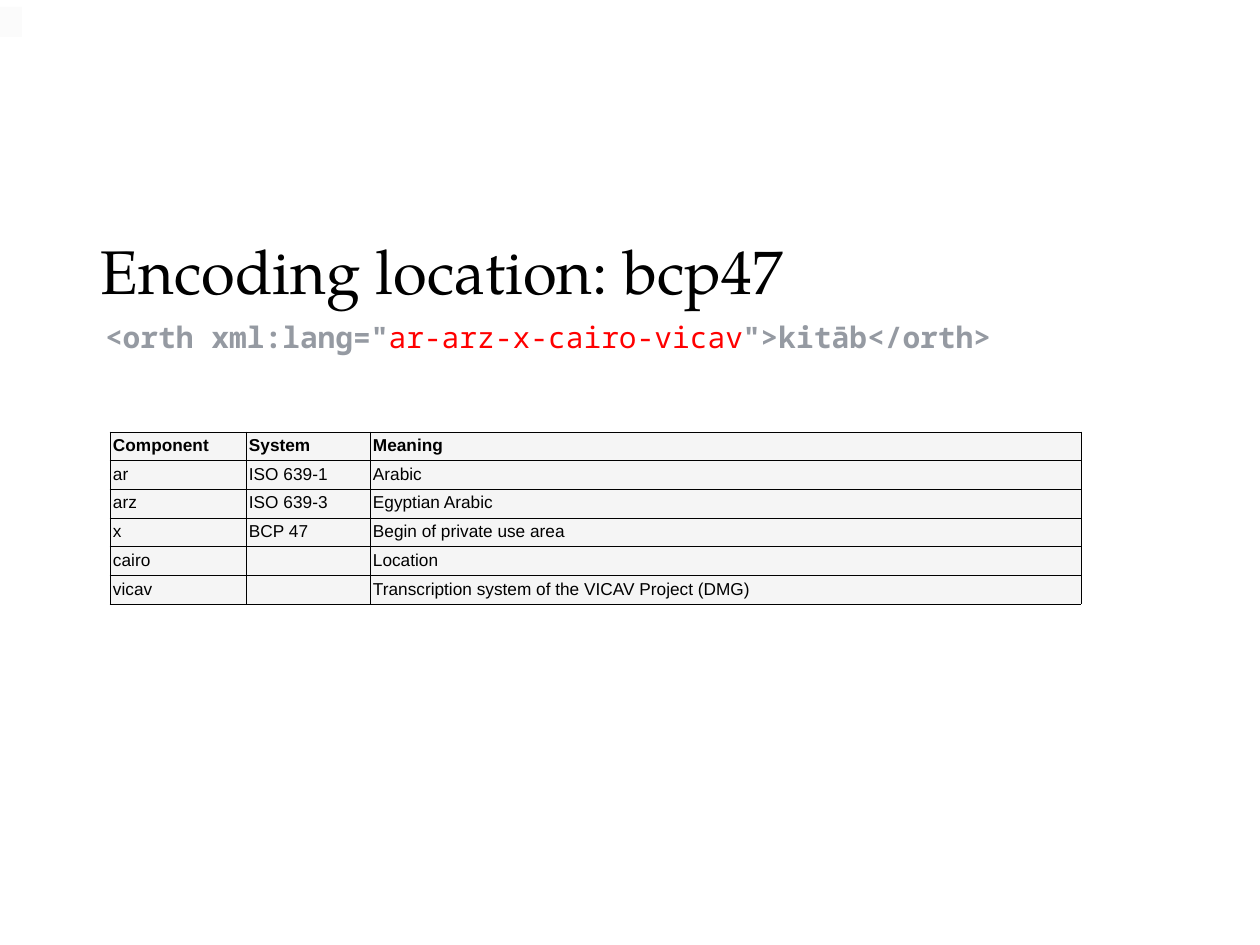
from lxml.etree import SubElement
from pptx import Presentation
from pptx.dml.color import RGBColor
from pptx.enum.shapes import MSO_SHAPE
from pptx.enum.text import MSO_ANCHOR, MSO_AUTO_SIZE, PP_ALIGN
from pptx.oxml import parse_xml
from pptx.oxml.ns import nsdecls, qn
from pptx.util import Pt


def px(*lengths):
    return [n * 10320 for n in lengths]


def style(font, name, size, color, bold=False):
    font.name = name
    font.size = Pt(size)
    font.bold = bold
    font.color.rgb = RGBColor.from_string(color)


prs = Presentation()
prs.slide_width, prs.slide_height = px(1260, 945)
s = prs.slides.add_slide(prs.slide_layouts[5])

title = s.shapes.title
title.left, title.top, title.width, title.height = px(92, 206, 1076, 127)
tf = title.text_frame
tf.text = "Encoding location: bcp47"
tf.auto_size = MSO_AUTO_SIZE.NONE
tf.vertical_anchor = MSO_ANCHOR.MIDDLE
tf.margin_left, tf.margin_right, tf.margin_top, tf.margin_bottom = px(9, 9, 9, 9)
p = tf.paragraphs[0]
p.alignment = PP_ALIGN.LEFT
style(p.runs[0].font, "TeX Gyre Pagella", 50, "000000")

corner = s.shapes.add_shape(MSO_SHAPE.RECTANGLE, *px(0, 7, 22, 30))
corner.shadow.inherit = False
corner.fill.solid()
corner.fill.fore_color.rgb = RGBColor.from_string("FBFBFB")
corner.line.fill.background()

code = s.shapes.add_textbox(*px(105, 319, 1063, 40))
tf = code.text_frame
tf.word_wrap = True
tf.margin_left = tf.margin_right = tf.margin_top = tf.margin_bottom = 0
p = tf.paragraphs[0]
for text, color, bold in [
    ('<orth xml:lang="', "959AA2", True),
    ("ar-arz-x-cairo-vicav", "FF0000", False),
    ('">kitāb</orth>', "959AA2", True),
]:
    r = p.add_run()
    r.text = text
    style(r.font, "Noto Sans Mono", 24, color, bold)

rows = [
    ("Component", "System", "Meaning"),
    ("ar", "ISO 639-1", "Arabic"),
    ("arz", "ISO 639-3", "Egyptian Arabic"),
    ("x", "BCP 47", "Begin of private use area"),
    ("cairo", "", "Location"),
    ("vicav", "", "Transcription system of the VICAV Project (DMG)"),
]
widths = px(136, 124, 711)
table = s.shapes.add_table(len(rows), len(widths), *px(110, 432, 971, 168)).table
table.horz_banding = False
for column, width in zip(table.columns, widths):
    column.width = width

for i, row in enumerate(rows):
    for j, text in enumerate(row):
        cell = table.cell(i, j)
        cell.margin_left, cell.margin_right, cell.margin_top, cell.margin_bottom = px(3, 3, 4, 4)
        tcPr = cell._tc.get_or_add_tcPr()
        for side in ("lnL", "lnR", "lnT", "lnB"):
            tcPr.append(parse_xml(
                f'<a:{side} {nsdecls("a")} w="9525"><a:solidFill>'
                f'<a:srgbClr val="000000"/></a:solidFill></a:{side}>'))
        cell.fill.solid()
        cell.fill.fore_color.rgb = RGBColor.from_string("F5F5F5")
        p = cell.text_frame.paragraphs[0]
        if text:
            p.text = text
            style(p.runs[0].font, "Arial", 14, "000000", i == 0)
        else:
            SubElement(p._p, qn("a:endParaRPr"), sz="1400")

prs.save("out.pptx")
